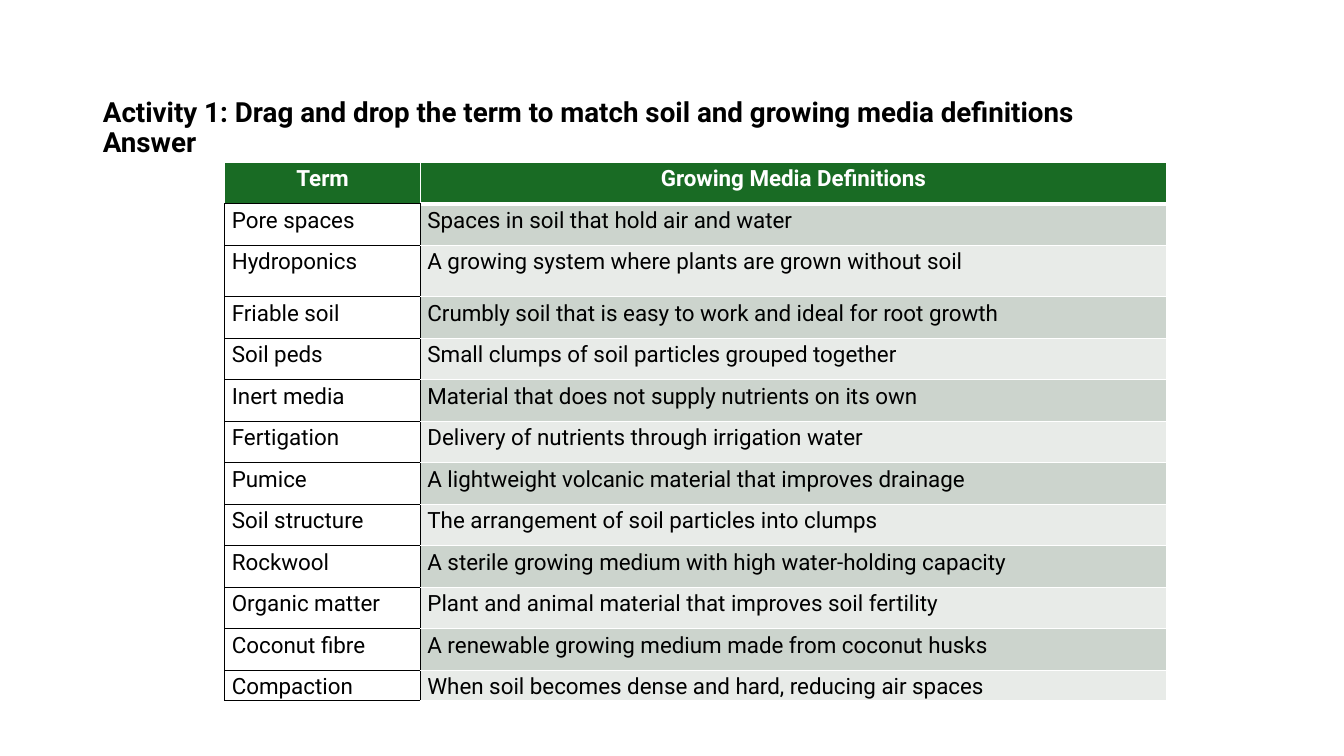
from dataclasses import dataclass

import pptx
import pptx.dml.color
import pptx.enum.text
import pptx.oxml.ns
import pptx.slide
import pptx.table
import pptx.text.text
import pptx.util
from lxml import etree
from pptx.util import Inches


@dataclass(frozen=True)
class Theme:
    font: str = "Roboto"
    black: str = "000000"
    white: str = "FFFFFF"
    header: str = "196B24"
    bands: tuple[str, str] = ("CCD4CD", "E8EBE8")
    title_size: float = 19.8
    table_size: float = 16


@dataclass(frozen=True)
class Entry:
    term: str
    definition: str


@dataclass(frozen=True)
class Border:
    side: str
    color: str
    width: float = 1


@dataclass(frozen=True)
class CellStyle:
    borders: tuple[Border, ...]
    text_color: str
    fill: str | None = None
    header: bool = False


THEME = Theme()
HEADING = Entry("Term", "Growing Media Definitions")
ENTRIES = [
    Entry("Pore spaces", "Spaces in soil that hold air and water"),
    Entry("Hydroponics", "A growing system where plants are grown without soil"),
    Entry("Friable soil", "Crumbly soil that is easy to work and ideal for root growth"),
    Entry("Soil peds", "Small clumps of soil particles grouped together"),
    Entry("Inert media", "Material that does not supply nutrients on its own"),
    Entry("Fertigation", "Delivery of nutrients through irrigation water"),
    Entry("Pumice", "A lightweight volcanic material that improves drainage"),
    Entry("Soil structure", "The arrangement of soil particles into clumps"),
    Entry("Rockwool", "A sterile growing medium with high water-holding capacity"),
    Entry("Organic matter", "Plant and animal material that improves soil fertility"),
    Entry("Coconut fibre", "A renewable growing medium made from coconut husks"),
    Entry("Compaction", "When soil becomes dense and hard, reducing air spaces"),
]

# Row heights: one taller row, a short last row, the rest equal
TALL_ROW, TALL_HEIGHT, LAST_HEIGHT = 2, 0.51, 0.3
ROW_HEIGHT = (5.04 - TALL_HEIGHT) / (len(ENTRIES) - 1)
COLUMN_WIDTHS = (1.94, 7.4)


def rgb(color: str) -> pptx.dml.color.RGBColor:
    return pptx.dml.color.RGBColor.from_string(color)


def add_run(paragraph: pptx.text.text._Paragraph, text: str, size: float,
            color: str, bold: bool) -> None:
    run = paragraph.add_run()
    run.text = text
    run.font.name = THEME.font
    run.font.size = pptx.util.Pt(size)
    run.font.bold = bold
    run.font.color.rgb = rgb(color)


def borders(left: str, right: str, top: str, bottom: str,
            bottom_width: float = 1) -> tuple[Border, ...]:
    return (Border("L", left), Border("R", right), Border("T", top),
            Border("B", bottom, bottom_width))


def draw_border(cell: pptx.table._Cell, border: Border) -> None:
    qn = pptx.oxml.ns.qn
    line = etree.SubElement(cell._tc.get_or_add_tcPr(), qn(f"a:ln{border.side}"),
                            w=str(pptx.util.Pt(border.width)))
    fill = etree.SubElement(line, qn("a:solidFill"))
    etree.SubElement(fill, qn("a:srgbClr"), val=border.color)


def fill_cell(cell: pptx.table._Cell, text: str, style: CellStyle) -> None:
    cell.margin_left = cell.margin_right = Inches(0.07)
    cell.margin_top = cell.margin_bottom = 0
    for border in style.borders:
        draw_border(cell, border)
    if style.fill:
        cell.fill.solid()
        cell.fill.fore_color.rgb = rgb(style.fill)
    else:
        cell.fill.background()
    paragraph = cell.text_frame.paragraphs[0]
    align = pptx.enum.text.PP_ALIGN
    paragraph.alignment = align.CENTER if style.header else align.LEFT
    paragraph.line_spacing = 1.15
    paragraph.space_after = pptx.util.Pt(6)
    add_run(paragraph, text, THEME.table_size, style.text_color, style.header)


def add_heading(slide: pptx.slide.Slide) -> None:
    heading = slide.shapes.title
    heading.left, heading.top = Inches(0.92), Inches(0.4)
    heading.width, heading.height = Inches(11.5), Inches(1.45)
    frame = heading.text_frame
    frame.word_wrap = True
    frame.auto_size = pptx.enum.text.MSO_AUTO_SIZE.NONE
    frame.vertical_anchor = pptx.enum.text.MSO_ANCHOR.TOP
    frame.margin_top = Inches(0.58)
    frame.margin_bottom = 0
    paragraph = frame.paragraphs[0]
    paragraph.alignment = pptx.enum.text.PP_ALIGN.LEFT
    paragraph.line_spacing = 0.9
    activity = "Activity 1: Drag and drop the term to match soil and growing media definitions"
    add_run(paragraph, activity, THEME.title_size, THEME.black, True)
    paragraph.add_line_break()
    add_run(paragraph, "Answer", THEME.title_size, THEME.black, True)


def add_glossary(slide: pptx.slide.Slide) -> None:
    heights = [ROW_HEIGHT] * len(ENTRIES) + [LAST_HEIGHT]
    heights[TALL_ROW] = TALL_HEIGHT
    glossary = slide.shapes.add_table(
        len(heights), len(COLUMN_WIDTHS), Inches(2.23), Inches(1.61),
        Inches(sum(COLUMN_WIDTHS)), Inches(sum(heights))).table
    glossary.horz_banding = False
    for column, width in zip(glossary.columns, COLUMN_WIDTHS):
        column.width = Inches(width)
    for row, height in zip(glossary.rows, heights):
        row.height = Inches(height)

    # Header row
    black, white = THEME.black, THEME.white
    term_header = CellStyle(borders(white, white, white, black), white, THEME.header, True)
    definition_header = CellStyle(borders(white, white, white, white, 3), white,
                                  THEME.header, True)
    fill_cell(glossary.cell(0, 0), HEADING.term, term_header)
    fill_cell(glossary.cell(0, 1), HEADING.definition, definition_header)

    # Outlined terms beside banded definitions
    term_style = CellStyle(borders(black, black, black, black), black)
    for index, entry in enumerate(ENTRIES):
        top_width = 3 if index == 0 else 1
        sides = (Border("L", black), Border("R", white),
                 Border("T", white, top_width), Border("B", white))
        definition_style = CellStyle(sides, black, THEME.bands[index % 2])
        fill_cell(glossary.cell(index + 1, 0), entry.term, term_style)
        fill_cell(glossary.cell(index + 1, 1), entry.definition, definition_style)


def main() -> None:
    deck = pptx.Presentation()
    deck.slide_width, deck.slide_height = Inches(13.33), Inches(7.5)
    slide = deck.slides.add_slide(deck.slide_layouts[5])
    add_heading(slide)
    add_glossary(slide)
    deck.save("out.pptx")


if __name__ == "__main__":
    main()
